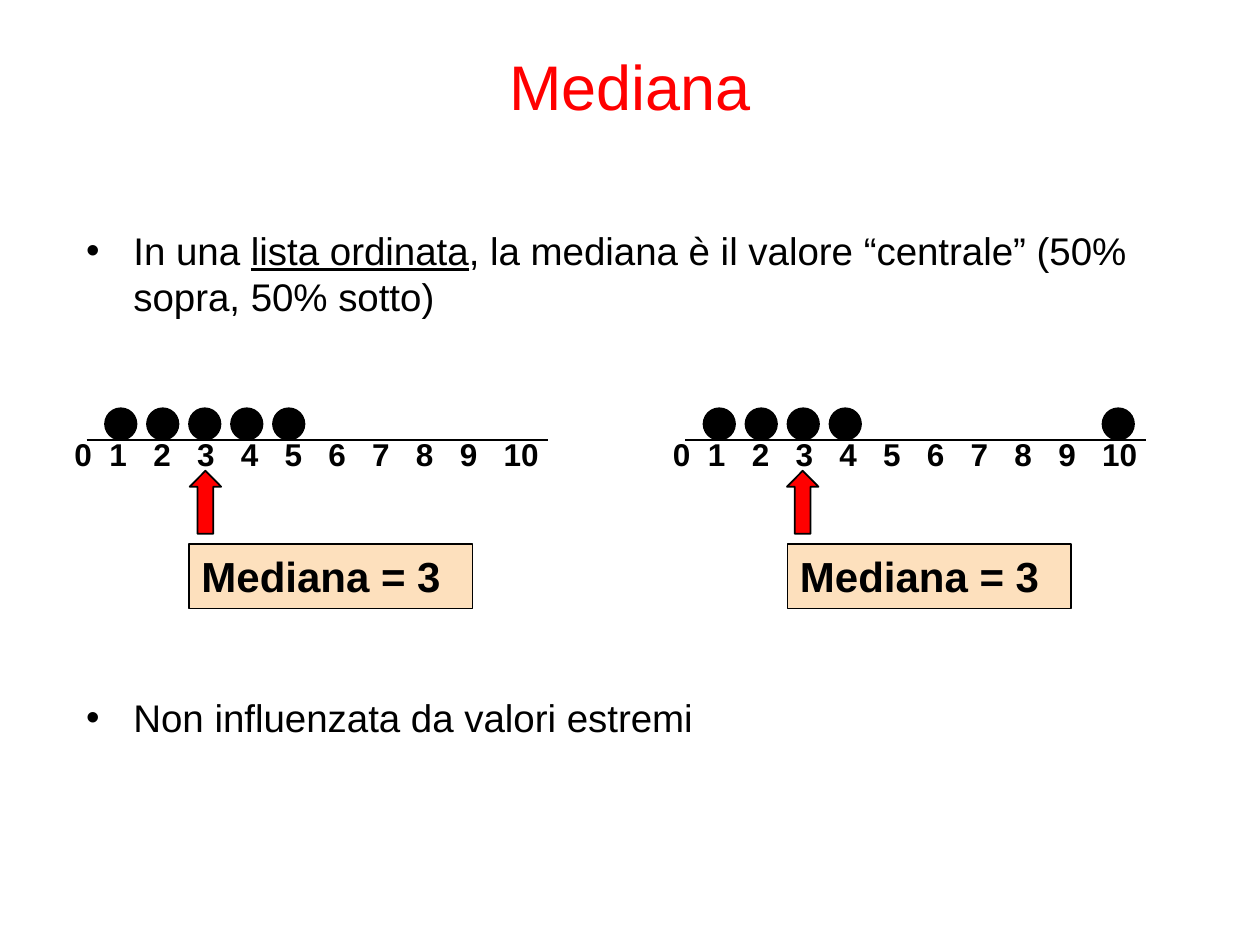
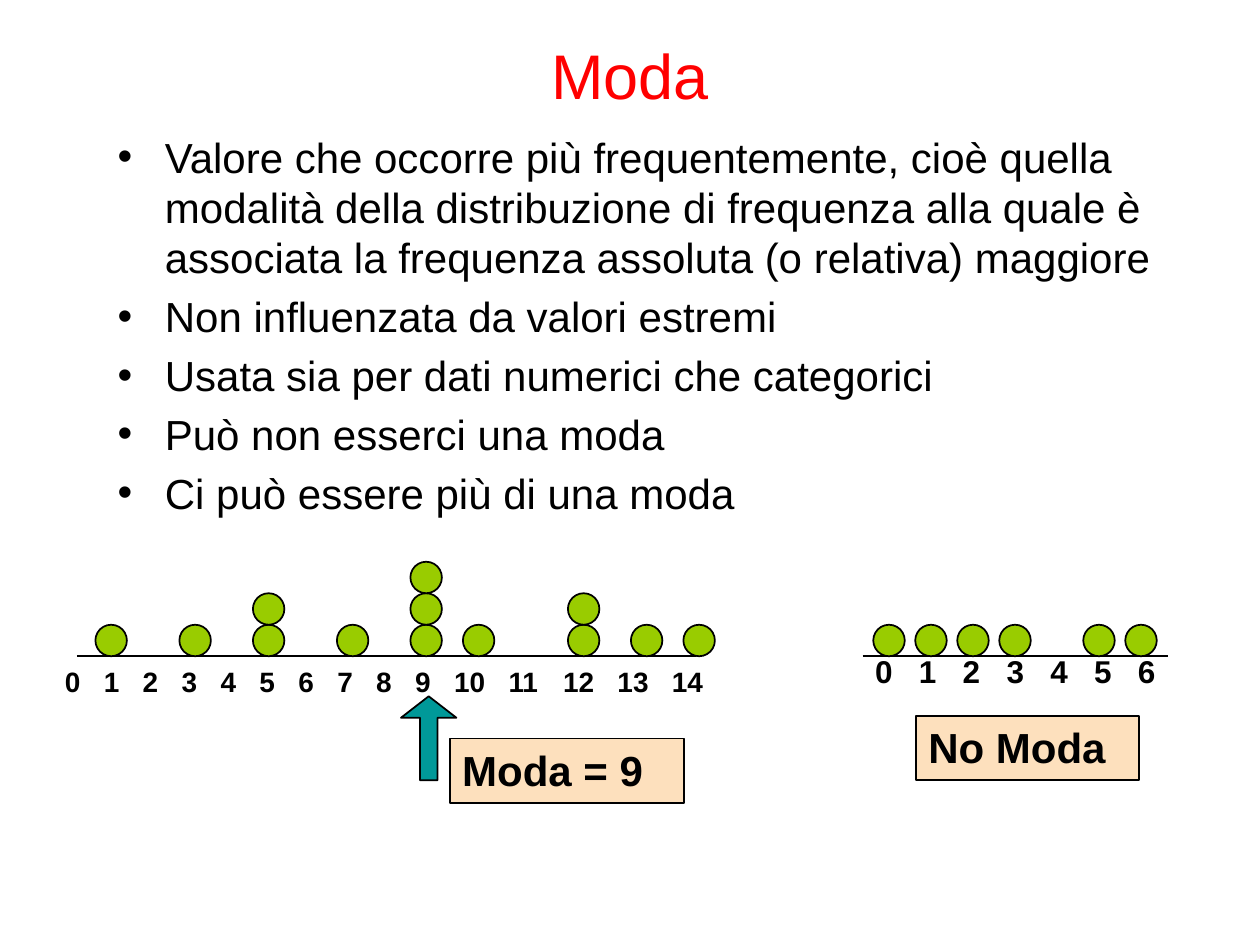
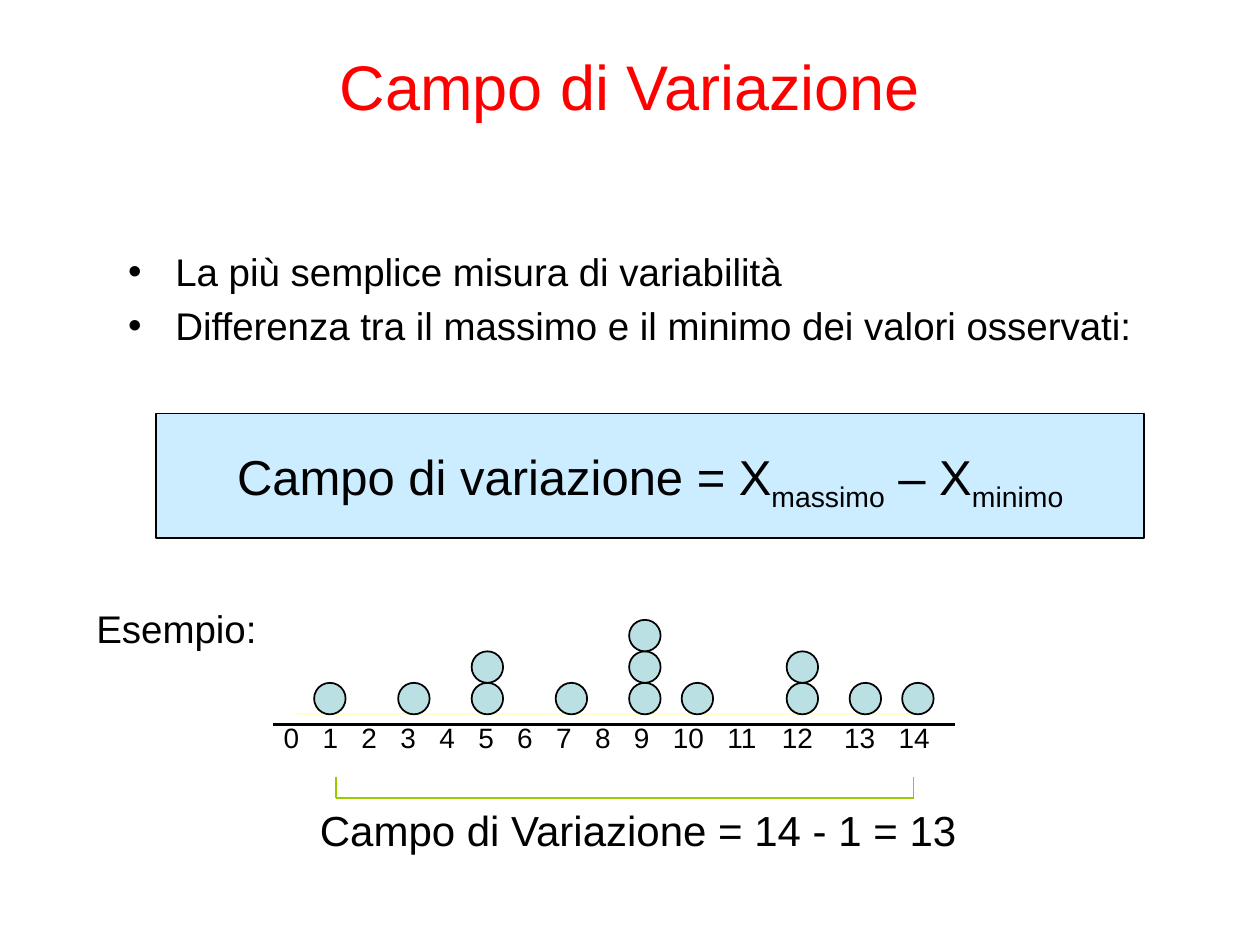
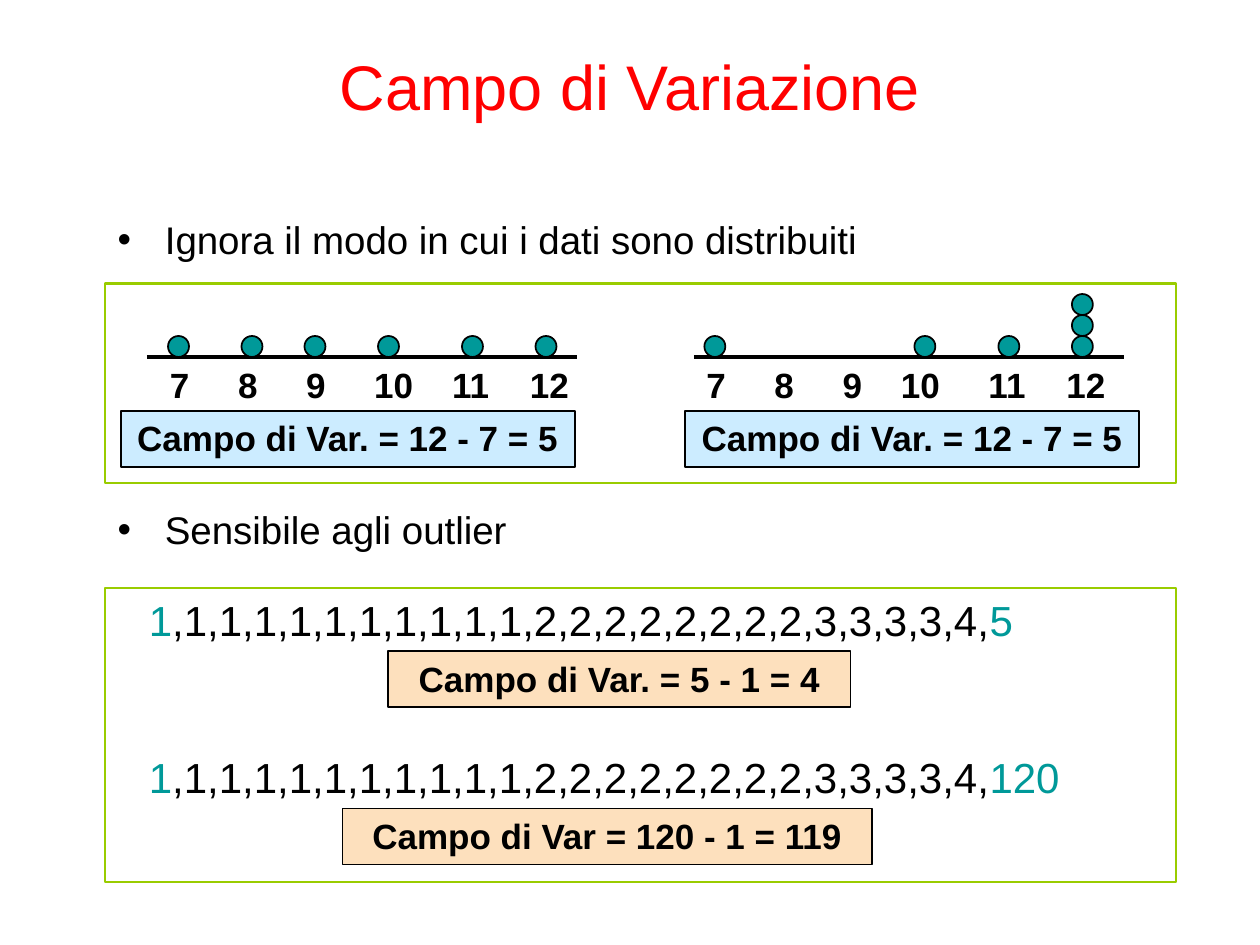
from collections import Counter
from itertools import accumulate, pairwise

from lxml.etree import SubElement
from pptx import Presentation
from pptx.dml.color import RGBColor
from pptx.enum.shapes import MSO_CONNECTOR as Connector, MSO_SHAPE as Shape
from pptx.enum.text import MSO_ANCHOR as Anchor, MSO_AUTO_SIZE as AutoSize, PP_ALIGN as Align
from pptx.oxml.ns import qn
from pptx.util import Pt

FONT = "Arial"
BLACK, RED, TEAL, LIME = "000000", "FF0000", "009999", "99CC00"
PEACH, SKY, AQUA, CREAM = "FDE0BD", "CCECFF", "BBE0E3", "FFFFCC"
DIGIT, SPACE = 0.556, 0.278

SAMPLE = [0, 8, 15, 15, 23, 30, 30, 30, 35, 45, 45, 51, 56]
SERIES = ",1,1,1,1,1,1,1,1,1,1,2,2,2,2,2,2,2,2,3,3,3,3,4,"
ANSWER = {"fill": PEACH, "bold": True}
RANGE = {"fill": PEACH, "bold": True, "size": 20, "align": Align.CENTER}
RANGE_TEXT = "Campo di Var. = 12 - 7 = 5"
MEDIAN = {"y": 251.3, "length": 263.5, "step": 24, "fill": BLACK,
          "numbers": range(11), "gaps": {0: 2}, "drop": -6.5}
MODE = {"y": 375, "fill": LIME}
SPREAD = {"y": 204, "length": 246, "fill": TEAL, "width": 2.25, "dot": 12,
          "numbers": range(7, 13), "size": 20, "gap": 5}
MEDIAN_ARROW = {"y": 278, "length": 36, "breadth": 18, "fill": RED, "shape": (0.5, 0.504)}
MODE_ARROW = {"y": 406, "length": 48, "breadth": 31.7, "fill": TEAL, "shape": (0.315, 0.387)}


def series(last):
    """Return the spans of a data series whose extremes stand out."""
    return [("\t", {}), ("1", {"color": TEAL}), (SERIES, {}), (last, {"color": TEAL})]


PAGES = [
    {
        "title": "Mediana",
        "body": (42, 126),
        "bullet_size": 22,
        "bullets": [
            [("In una ", {}), ("lista ordinata", {"underline": True}),
             (", la mediana è il valore “centrale” (50% sopra, 50% sotto)", {})],
            "Non influenzata da valori estremi",
        ],
        "bullet_gap": 214,
        "plots": [{**MEDIAN, "x": 49.5, "places": range(5)},
                  {**MEDIAN, "x": 391.5, "places": [0, 1, 2, 3, 9.5]}],
        "arrows": [{**MEDIAN_ARROW, "x": x} for x in (99.4, 440.7)],
        "boxes": [("Mediana = 3", x, 311, 162, ANSWER) for x in (108, 450)],
    },
    {
        "title": "Moda",
        "title_height": 78,
        "body": (60, 71.3),
        "bullet_size": 24,
        "bullets": [
            "Valore che occorre più frequentemente, cioè quella modalità della distribuzione "
            "di frequenza alla quale è associata la frequenza assoluta (o relativa) maggiore",
            "Non influenzata da valori estremi",
            "Usata sia per dati numerici che categorici",
            "Può non esserci una moda",
            "Ci può essere più di una moda",
        ],
        "plots": [
            {**MODE, "x": 44, "length": 353.5, "places": SAMPLE, "numbers": range(15),
             "size": 16, "drop": 1},
            {**MODE, "x": 493, "length": 174.5, "places": [0, 1, 2, 3, 5, 6], "step": 24,
             "numbers": range(7), "drop": -6, "label_shift": 0, "dot_shift": 6},
        ],
        "arrows": [{**MODE_ARROW, "x": 221}],
        "boxes": [("Moda = 9", 257, 422, 134, ANSWER), ("No Moda", 523.4, 409, 127.5, ANSWER)],
    },
    {
        "title": "Campo di Variazione",
        "body": (66, 138),
        "bullet_size": 22,
        "bullets": ["La più semplice misura di variabilità",
                    "Differenza tra il massimo e il minimo dei valori osservati:"],
        "plots": [{"x": 169, "y": 408.2, "length": 354.5, "color": CREAM, "places": SAMPLE,
                   "fill": AQUA, "numbers": range(15), "gaps": {12: 4}, "size": 16,
                   "bold": False}],
        "outlines": [
            ([(156, 414), (546, 414)], BLACK, 1.5),
            ([(192, 444), (192, 456), (522, 456), (522, 444)], LIME, 0.75),
        ],
        "boxes": [
            ([("Campo di variazione = X", {}), ("massimo", {"baseline": -25}),
              (" – X", {}), ("minimo", {"baseline": -25})], 89.3, 236.2, 564.5,
             {"fill": SKY, "size": 28, "align": Align.CENTER, "spacing": 1.4, "height": 71.3}),
            ("Campo di Variazione = 14 - 1 = 13", 175.7, 456, 452, {}),
            ("Esempio:", 48, 342, 324, {"size": 22}),
        ],
    },
    {
        "title": "Campo di Variazione",
        "body": (60, 120),
        "bullet_size": 22,
        "bullets": ["Ignora il modo in cui i dati sono distribuiti", "Sensibile agli outlier"],
        "bullet_gap": 139,
        "plots": [
            {**SPREAD, "x": 84, "places": [0, 7, 13, 20, 28, 35], "gaps": {10: 4, 11: 4},
             "label_shift": 6, "dot_shift": 12},
            {**SPREAD, "x": 396.5, "places": [0, 20, 28, 35, 35, 35], "gaps": {9: 4, 11: 4},
             "label_shift": 0, "dot_shift": 6},
        ],
        "boxes": [
            *[(RANGE_TEXT, x, 234.7, 259.4, {**RANGE, "fill": SKY}) for x in (69, 391.5)],
            (series("5"), 42, 336, 648, {}),
            (series("120"), 42, 426, 648, {}),
            ("Campo di Var. = 5 - 1 = 4", 221.8, 372, 264.3, RANGE),
            ("Campo di Var = 120 - 1 = 119", 195.8, 462, 302.4, RANGE),
        ],
        "frames": [(162, 114), (336, 168)],
    },
]


def rgb(color):
    """Turn a hex string into a colour."""
    return RGBColor.from_string(color)


def write(para, text, size=24, color=BLACK, bold=False, align=None, spacing=None, before=0):
    """Fill a paragraph with a string or with (text, format) spans."""
    para.alignment = align
    if spacing:
        para.line_spacing = spacing
    if before is not None:
        para.space_before = Pt(before)
    for words, style in [(text, {})] if isinstance(text, str) else text:
        span = para.add_run()
        span.text = words
        font = span.font
        font.name, font.size, font.bold = FONT, Pt(size), bold
        font.underline = style.get("underline")
        font.color.rgb = rgb(style.get("color", color))
        if "baseline" in style:
            span._r.get_or_add_rPr().set("baseline", str(style["baseline"] * 1000))


def place(box, *rect):
    """Move and size a shape."""
    box.left, box.top, box.width, box.height = map(Pt, rect)


def add_shape(page, kind, rect, fill=None, line=BLACK, width=1):
    """Draw a preset shape with a flat fill and an outline."""
    shape = page.shapes.add_shape(kind, *map(Pt, rect))
    shape.shadow.inherit = False
    if fill:
        shape.fill.solid()
        shape.fill.fore_color.rgb = rgb(fill)
    else:
        shape.fill.background()
    shape.line.color.rgb = rgb(line)
    shape.line.width = Pt(width)
    return shape


def add_box(page, text, x, y, width, size=24, fill=None, height=None, **style):
    """Add a one-line text box, framed when filled, and return its paragraph."""
    rect = (x, y, width, height or size * 1.2 + 8)
    if fill:
        box = add_shape(page, Shape.RECTANGLE, rect, fill)
    else:
        box = page.shapes.add_textbox(*map(Pt, rect))
    frame = box.text_frame
    frame.word_wrap, frame.auto_size = True, AutoSize.NONE
    frame.vertical_anchor = Anchor.TOP
    para = frame.paragraphs[0]
    write(para, text, size, **{"align": Align.LEFT, **style})
    return para


def add_line(page, start, end, color, width):
    """Draw a straight line without shadow."""
    line = page.shapes.add_connector(Connector.STRAIGHT, *map(Pt, (*start, *end)))
    line.line.color.rgb = rgb(color)
    line.line.width = Pt(width)
    SubElement(line._element.spPr, qn("a:effectLst"))


def add_scale(page, x, y, numbers, gap, gaps, size, bold):
    """Write the numbers of an axis on tab stops, spaced by digit and gap widths."""
    steps = [size * (DIGIT * len(str(n)) + SPACE * gaps.get(n, gap)) for n in numbers]
    para = add_box(page, "\t".join(map(str, numbers)), x, y, sum(steps) + 30,
                   size=size, bold=bold)
    tabs = SubElement(para._p.get_or_add_pPr(), qn("a:tabLst"))
    for position in accumulate(steps[:-1]):
        SubElement(tabs, qn("a:tab"), pos=str(int(Pt(position))), algn="l")


def add_plot(page, x, y, length, places, numbers, fill, step=6, dot=18, color=BLACK, width=1,
             gap=3, gaps={}, size=18, bold=True, drop=0, label_shift=-14, dot_shift=10.5):
    """Draw an axis with its numbers and the dots stacked on it."""
    add_line(page, (x, y), (x + length, y), color, width)
    add_scale(page, x + label_shift, y + drop, numbers, gap, gaps, size, bold)
    for spot, count in Counter(places).items():
        for level in range(1, count + 1):
            rect = (x + dot_shift + spot * step, y - level * dot, dot, dot)
            add_shape(page, Shape.OVAL, rect, fill)


def add_arrow(page, x, y, length, breadth, fill, shape):
    """Draw a block arrow that points up."""
    arrow = add_shape(page, Shape.RIGHT_ARROW, (x, y, length, breadth), fill)
    arrow.rotation = 270
    for index, value in enumerate(shape):
        arrow.adjustments[index] = value


def add_page(deck, content):
    """Build one slide from its content."""
    page = deck.slides.add_slide(deck.slide_layouts[1])
    title, body = page.placeholders
    place(title, 0, 3.6, 720, content.get("title_height", 90))
    place(body, *content["body"], 636, 357)
    for holder in (title, body):
        holder.text_frame.auto_size = AutoSize.NONE
    title.text_frame.vertical_anchor = Anchor.MIDDLE
    write(title.text_frame.paragraphs[0], content["title"], size=36, color=RED,
          align=Align.CENTER)
    frame = body.text_frame
    for index, text in enumerate(content["bullets"]):
        para = frame.add_paragraph() if index else frame.paragraphs[0]
        before = content.get("bullet_gap") if index else 0
        write(para, text, size=content["bullet_size"], before=before)
    for plot in content["plots"]:
        add_plot(page, **plot)
    for points, color, width in content.get("outlines", []):
        for start, end in pairwise(points):
            add_line(page, start, end, color, width)
    for arrow in content.get("arrows", []):
        add_arrow(page, **arrow)
    for text, x, y, width, style in content["boxes"]:
        add_box(page, text, x, y, width, **style)
    for y, height in content.get("frames", []):
        add_shape(page, Shape.RECTANGLE, (60, y, 612, height), line=LIME, width=1.5)


def main():
    """Build and save the deck."""
    deck = Presentation()
    deck.slide_width, deck.slide_height = Pt(720), Pt(540)
    for content in PAGES:
        add_page(deck, content)
    deck.save("out.pptx")


if __name__ == "__main__":
    main()
